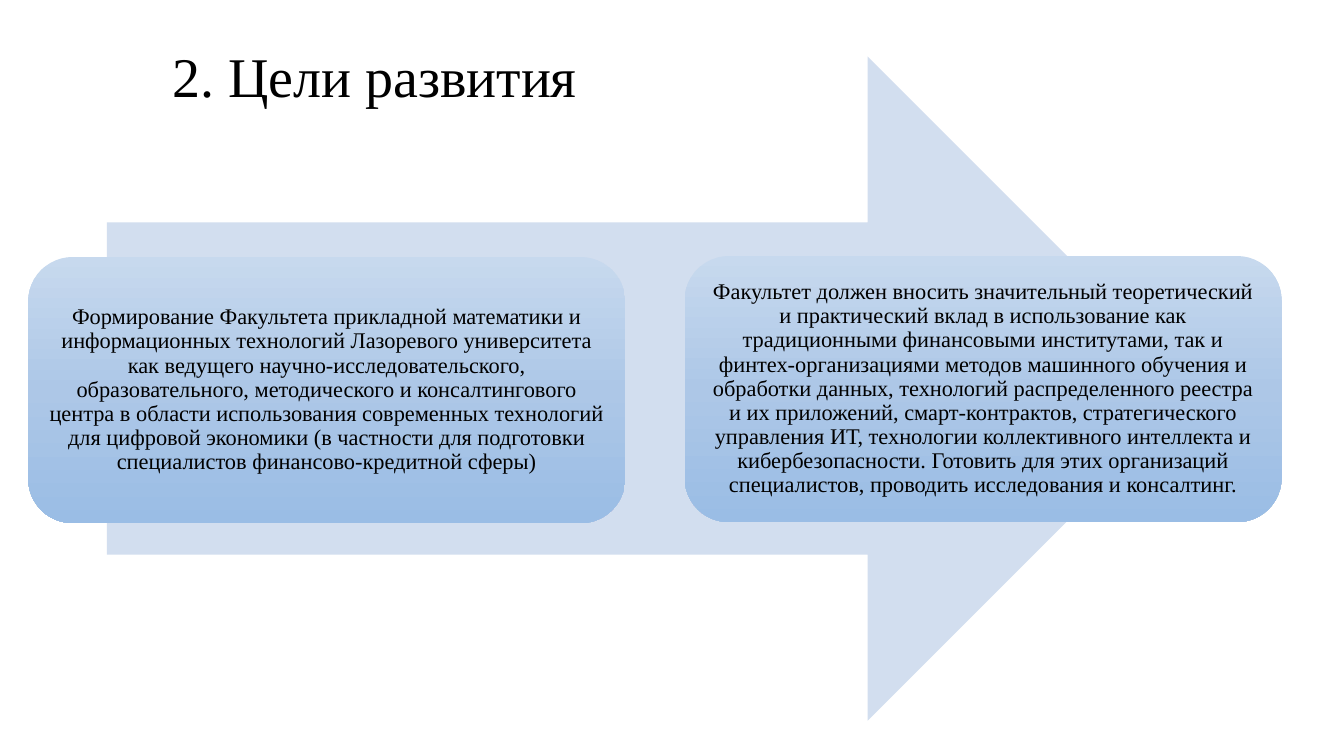
from copy import deepcopy
from dataclasses import dataclass

from pptx import Presentation
from pptx import util as u
from pptx.dml.color import RGBColor
from pptx.enum import shapes, text
from pptx.oxml.ns import qn
from pptx.shapes.autoshape import Shape
from pptx.slide import Slide
from pptx.text.text import TextFrame

PX = 9144  # EMU in one px, 100 px to the inch
FONT = "Times New Roman"
BLACK = RGBColor(0x00, 0x00, 0x00)
PALE = RGBColor(0xD2, 0xDE, 0xEF)
SHADES = (
    RGBColor(0xC7, 0xD9, 0xEE),
    RGBColor(0xAD, 0xC7, 0xE7),
    RGBColor(0x9A, 0xBD, 0xE5),
)
CARD_W, CARD_H, INSET = 592, 264, 7


@dataclass(frozen=True)
class Goal:
    left: int
    top: int
    words: str


GOALS = (
    Goal(28, 255, "Формирование Факультета прикладной математики и "
         "информационных технологий Лазоревого университета как ведущего "
         "научно-исследовательского, образовательного, методического и "
         "консалтингового центра в области использования современных "
         "технологий для цифровой экономики (в частности для подготовки "
         "специалистов финансово-кредитной сферы)"),
    Goal(679, 254, "Факультет должен вносить значительный теоретический и "
         "практический вклад в использование как традиционными финансовыми "
         "институтами, так и финтех-организациями методов машинного обучения "
         "и обработки данных, технологий распределенного реестра и их "
         "приложений, смарт-контрактов, стратегического управления ИТ, "
         "технологии коллективного интеллекта и кибербезопасности. Готовить "
         "для этих организаций специалистов, проводить исследования и "
         "консалтинг."),
)


def write(frame: TextFrame, words: str, size: int, align: text.PP_ALIGN) -> None:
    frame.text = words
    frame.word_wrap = True
    frame.auto_size = text.MSO_AUTO_SIZE.NONE
    frame.vertical_anchor = text.MSO_ANCHOR.MIDDLE
    line = frame.paragraphs[0]
    line.alignment = align
    line.line_spacing = 0.9
    font = line.runs[0].font
    font.name, font.size = FONT, u.Pt(size)
    font.color.rgb = BLACK


def add_plain(slide: Slide, kind: shapes.MSO_SHAPE, *box: int) -> Shape:
    """Add a shape without line or shadow; box is left, top, width, height."""
    shape = slide.shapes.add_shape(kind, *(n * PX for n in box))
    shape.shadow.inherit = False
    shape.line.fill.background()
    return shape


def shade(shape: Shape) -> None:
    """Fill from top to bottom with evenly spaced SHADES."""
    fill = shape.fill
    fill.gradient()
    fill.gradient_angle = 270
    stops = next(shape.element.iter(qn("a:gsLst")))
    stops.insert(1, deepcopy(stops[0]))
    for i, (stop, color) in enumerate(zip(fill.gradient_stops, SHADES)):
        stop.position = i / (len(SHADES) - 1)
        stop.color.rgb = color


def add_goal(slide: Slide, goal: Goal) -> None:
    card = add_plain(slide, shapes.MSO_SHAPE.ROUNDED_RECTANGLE,
                     goal.left, goal.top, CARD_W, CARD_H)
    shade(card)
    frame = card.text_frame
    frame.margin_left = frame.margin_right = INSET * PX
    frame.margin_top = frame.margin_bottom = INSET * PX
    write(frame, goal.words, 16, text.PP_ALIGN.CENTER)


def main() -> None:
    deck = Presentation()
    deck.slide_width, deck.slide_height = 1333 * PX, 750 * PX
    slide = deck.slides.add_slide(deck.slide_layouts.get_by_name("Title Only"))

    title = slide.shapes.title
    title.left, title.top = 161 * PX, 36 * PX
    title.width, title.height = 654 * PX, 85 * PX
    write(title.text_frame, "2. Цели развития", 40, text.PP_ALIGN.LEFT)

    arrow = add_plain(slide, shapes.MSO_SHAPE.RIGHT_ARROW, 106, 56, 1084, 659)
    arrow.fill.solid()
    arrow.fill.fore_color.rgb = PALE

    for goal in GOALS:
        add_goal(slide, goal)
    deck.save("out.pptx")


if __name__ == "__main__":
    main()
